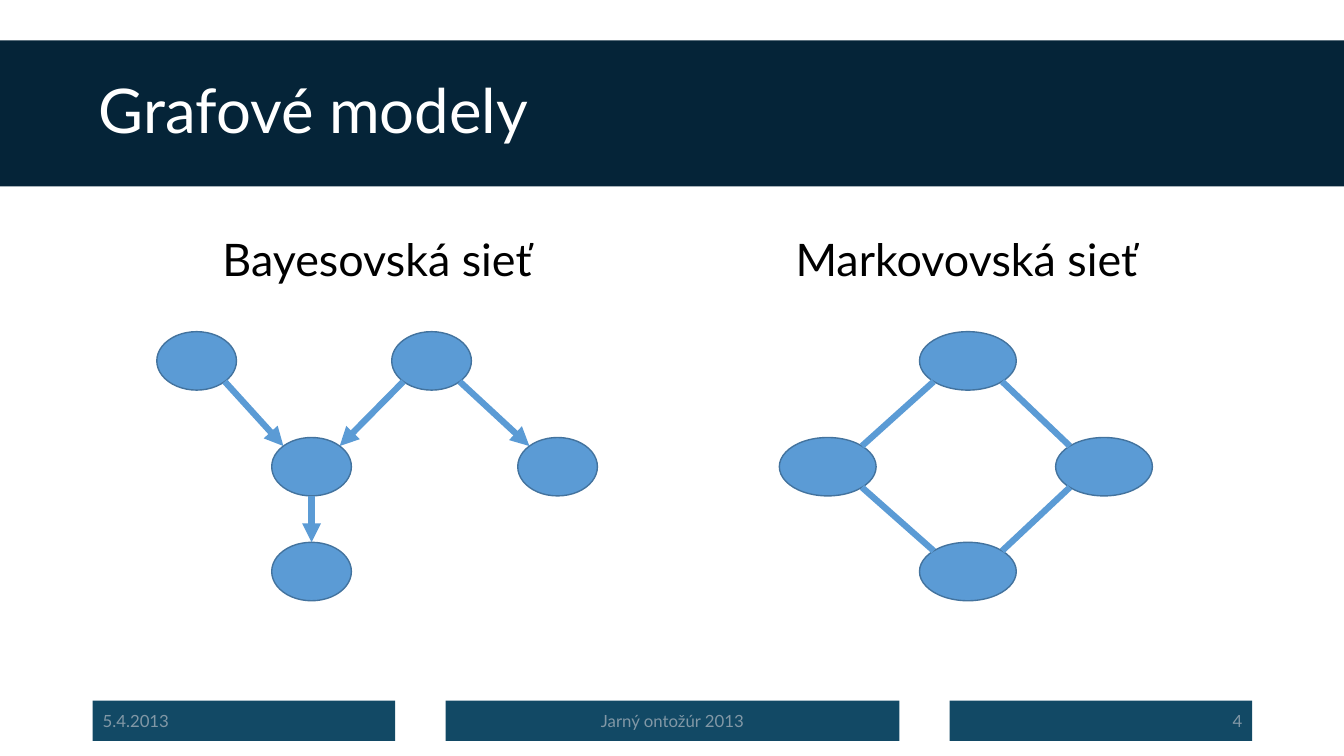
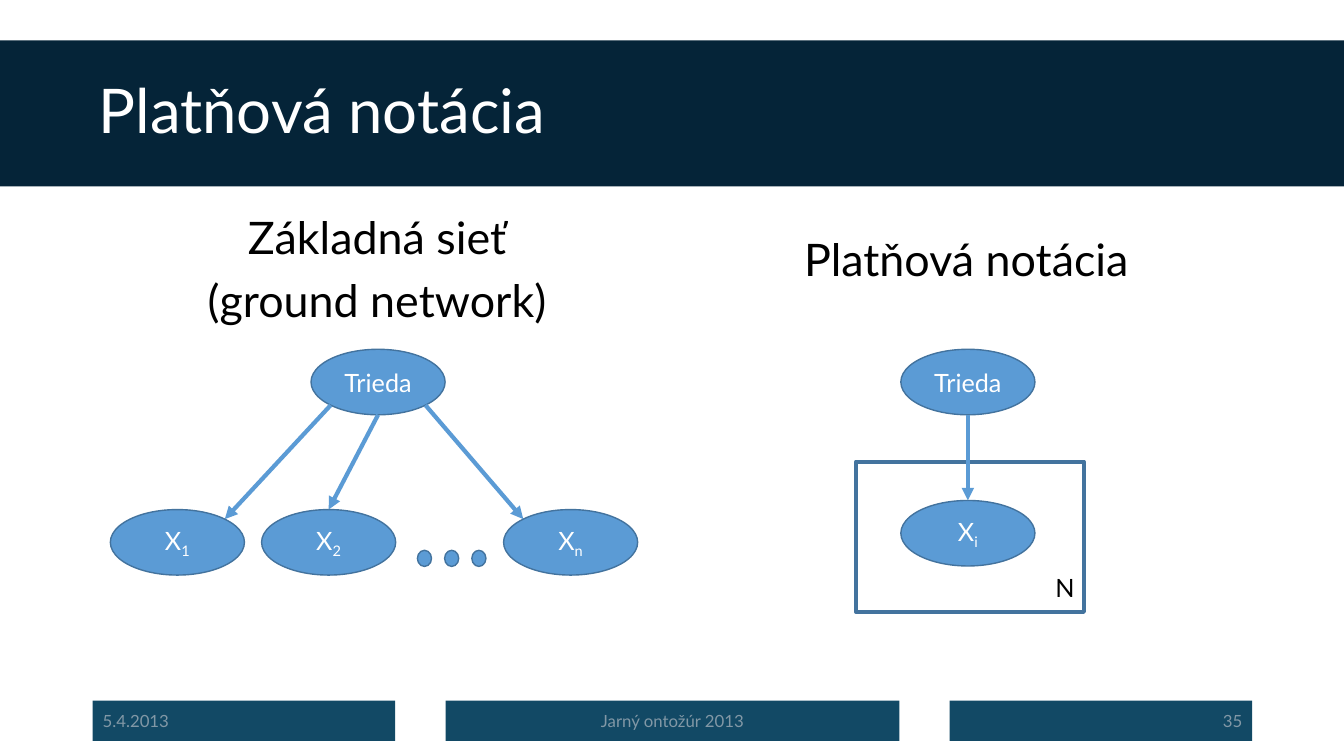
import math

from lxml import etree
from pptx import Presentation
from pptx.dml.color import RGBColor
from pptx.enum.shapes import MSO_CONNECTOR, MSO_SHAPE
from pptx.enum.text import MSO_ANCHOR, PP_ALIGN
from pptx.oxml.ns import qn
from pptx.util import Inches, Pt

NAVY = RGBColor(0x05, 0x24, 0x38)
TEAL = RGBColor(0x12, 0x49, 0x65)
FOOTER_GREY = RGBColor(0x82, 0x98, 0xA6)
NODE_BLUE = RGBColor(0x5B, 0x9B, 0xD5)
OUTLINE_BLUE = RGBColor(0x43, 0x73, 0x9E)
WHITE = RGBColor(0xFF, 0xFF, 0xFF)
BLACK = RGBColor(0x00, 0x00, 0x00)

FONT = "Lato"
LEFT, CENTER, RIGHT = PP_ALIGN.LEFT, PP_ALIGN.CENTER, PP_ALIGN.RIGHT
MIDDLE, BOTTOM = MSO_ANCHOR.MIDDLE, MSO_ANCHOR.BOTTOM
RECTANGLE, OVAL = MSO_SHAPE.RECTANGLE, MSO_SHAPE.OVAL
STRAIGHT = MSO_CONNECTOR.STRAIGHT

# Connection sites of an oval, numbered counterclockwise from the top
TOP, TOP_LEFT, BOTTOM_LEFT, BOTTOM_MID, BOTTOM_RIGHT, TOP_RIGHT = 0, 1, 3, 4, 5, 7

SLIDE_WIDTH = 13.33
LEFT_HEADING = (0.92, 5.64)
RIGHT_HEADING = (6.75, 5.67)
RIGHT_AXIS = 9.6


def add_span(para, text, size, color, subscript=False):
    span = para.add_run()
    span.text = text
    span.font.name = FONT
    span.font.size = Pt(size)
    span.font.color.rgb = color
    if subscript:
        span._r.get_or_add_rPr().set("baseline", "-25000")


def add_shape(page, kind, left, top, width, height, fill=None, outline=None, weight=1):
    shape = page.shapes.add_shape(
        kind, Inches(left), Inches(top), Inches(width), Inches(height))
    shape.shadow.inherit = False
    if fill is None:
        shape.fill.background()
    else:
        shape.fill.solid()
        shape.fill.fore_color.rgb = fill
    if outline is None:
        shape.line.fill.background()
    else:
        shape.line.color.rgb = outline
        shape.line.width = Pt(weight)
    return shape


def write_line(shape, text, size, color, align):
    frame = shape.text_frame
    frame.word_wrap = True
    frame.vertical_anchor = MIDDLE
    para = frame.paragraphs[0]
    para.alignment = align
    add_span(para, text, size, color)
    return para


def add_frame(page, title, number):
    """Add the title band and the three footer fields."""
    band = add_shape(page, RECTANGLE, 0, 0.4, SLIDE_WIDTH, 1.45, NAVY)
    band.text_frame.margin_left = Inches(0.98)
    write_line(band, title, 44, WHITE, LEFT).line_spacing = 0.9
    for left, width, text, align in (
            (0.92, 3, "5.4.2013", LEFT),
            (4.42, 4.5, "Jarný ontožúr 2013", CENTER),
            (9.42, 3, str(number), RIGHT)):
        field = add_shape(page, RECTANGLE, left, 6.95, width, 0.4, TEAL)
        write_line(field, text, 12, FOOTER_GREY, align)


def add_heading(page, column, lines, height=0.89):
    left, width = column
    box = page.shapes.add_textbox(
        Inches(left), Inches(2), Inches(width), Inches(height))
    frame = box.text_frame
    frame.word_wrap = True
    frame.vertical_anchor = BOTTOM
    for index, text in enumerate(lines):
        para = frame.add_paragraph() if index else frame.paragraphs[0]
        para.alignment = CENTER
        para.line_spacing = 0.9
        if index:
            para.space_before = Pt(10)
        add_span(para, text, 32, BLACK)


def add_node(page, center, size, label="", subscript=""):
    (x, y), (width, height) = center, size
    node = add_shape(page, OVAL, x - width / 2, y - height / 2, width, height,
                     NODE_BLUE, OUTLINE_BLUE)
    if label:
        para = write_line(node, label, 18, WHITE, CENTER)
        if subscript:
            add_span(para, subscript, 18, WHITE, subscript=True)
    return node


def site_point(node, site):
    angle = site * math.pi / 4
    x = node.left + node.width / 2 * (1 - math.sin(angle))
    y = node.top + node.height / 2 * (1 - math.cos(angle))
    return round(x), round(y)


def add_edge(page, start, start_site, end, end_site, weight, arrow=True):
    """Join two nodes with a line that stays attached to both."""
    edge = page.shapes.add_connector(
        STRAIGHT, *site_point(start, start_site), *site_point(end, end_site))
    edge.line.color.rgb = NODE_BLUE
    edge.line.width = Pt(weight)
    if arrow:
        etree.SubElement(edge.line._get_or_add_ln(), qn("a:tailEnd"), type="triangle")
    etree.SubElement(edge.element.spPr, qn("a:effectLst"))
    links = edge.element.find(".//" + qn("p:cNvCxnSpPr"))
    for tag, node, site in (("a:stCxn", start, start_site), ("a:endCxn", end, end_site)):
        etree.SubElement(links, qn(tag), id=str(node.shape_id), idx=str(site))


def add_bayes_network(page):
    upper, middle, lower = 3.58, 4.63, 5.67
    centers = ((1.95, upper), (4.28, upper), (3.09, middle), (5.53, middle), (3.09, lower))
    first, second, child, leaf, last = [
        add_node(page, center, (0.79, 0.58)) for center in centers]
    for start, start_site, end, end_site in (
            (first, BOTTOM_RIGHT, child, TOP_LEFT),
            (second, BOTTOM_LEFT, child, TOP_RIGHT),
            (second, BOTTOM_RIGHT, leaf, TOP_LEFT),
            (child, BOTTOM_MID, last, TOP)):
        add_edge(page, start, start_site, end, end_site, 4.5)


def add_markov_network(page):
    centers = ((RIGHT_AXIS, 3.58), (8.21, 4.63), (10.95, 4.63), (RIGHT_AXIS, 5.67))
    top, left, right, bottom = [
        add_node(page, center, (0.96, 0.58)) for center in centers]
    for start, start_site, end, end_site in (
            (left, TOP_RIGHT, top, BOTTOM_LEFT),
            (top, BOTTOM_RIGHT, right, TOP_LEFT),
            (left, BOTTOM_RIGHT, bottom, TOP_LEFT),
            (right, BOTTOM_LEFT, bottom, TOP_RIGHT)):
        add_edge(page, start, start_site, end, end_site, 4.5, arrow=False)


def add_ground_network(page, node_size):
    root = add_node(page, (3.75, 3.79), node_size, "Trieda")
    for x, subscript, start_site, end_site in (
            (1.76, "1", BOTTOM_LEFT, TOP_RIGHT),
            (3.26, "2", BOTTOM_MID, TOP),
            (5.66, "n", BOTTOM_RIGHT, TOP_LEFT)):
        leaf = add_node(page, (x, 5.38), node_size, "X", subscript)
        add_edge(page, root, start_site, leaf, end_site, 3)
    for index in range(3):
        add_node(page, (4.21 + 0.27 * index, 5.54), (0.14, 0.16))


def add_plate(page, node_size):
    add_shape(page, RECTANGLE, 8.49, 4.58, 2.26, 1.49, outline=OUTLINE_BLUE, weight=3)
    root = add_node(page, (RIGHT_AXIS, 3.79), node_size, "Trieda")
    leaf = add_node(page, (RIGHT_AXIS, 5.29), node_size, "X", "i")
    add_edge(page, root, BOTTOM_MID, leaf, TOP, 3)
    count = page.shapes.add_textbox(Inches(10.37), Inches(5.63), Inches(0.32), Inches(0.4))
    count.text_frame.word_wrap = False
    add_span(count.text_frame.paragraphs[0], "N", 18, BLACK)


def main():
    deck = Presentation()
    deck.slide_width = Inches(SLIDE_WIDTH)
    deck.slide_height = Inches(7.5)
    blank = deck.slide_layouts[6]

    page = deck.slides.add_slide(blank)
    add_frame(page, "Grafové modely", 4)
    add_heading(page, LEFT_HEADING, ["Bayesovská sieť"])
    add_heading(page, RIGHT_HEADING, ["Markovovská sieť"])
    add_markov_network(page)
    add_bayes_network(page)

    page = deck.slides.add_slide(blank)
    add_frame(page, "Platňová notácia", 35)
    add_heading(page, LEFT_HEADING, ["Základná sieť", "(ground network)"], 1.29)
    add_heading(page, RIGHT_HEADING, ["Platňová notácia"])
    node_size = (1.33, 0.65)
    add_ground_network(page, node_size)
    add_plate(page, node_size)

    deck.save("out.pptx")


if __name__ == "__main__":
    main()
